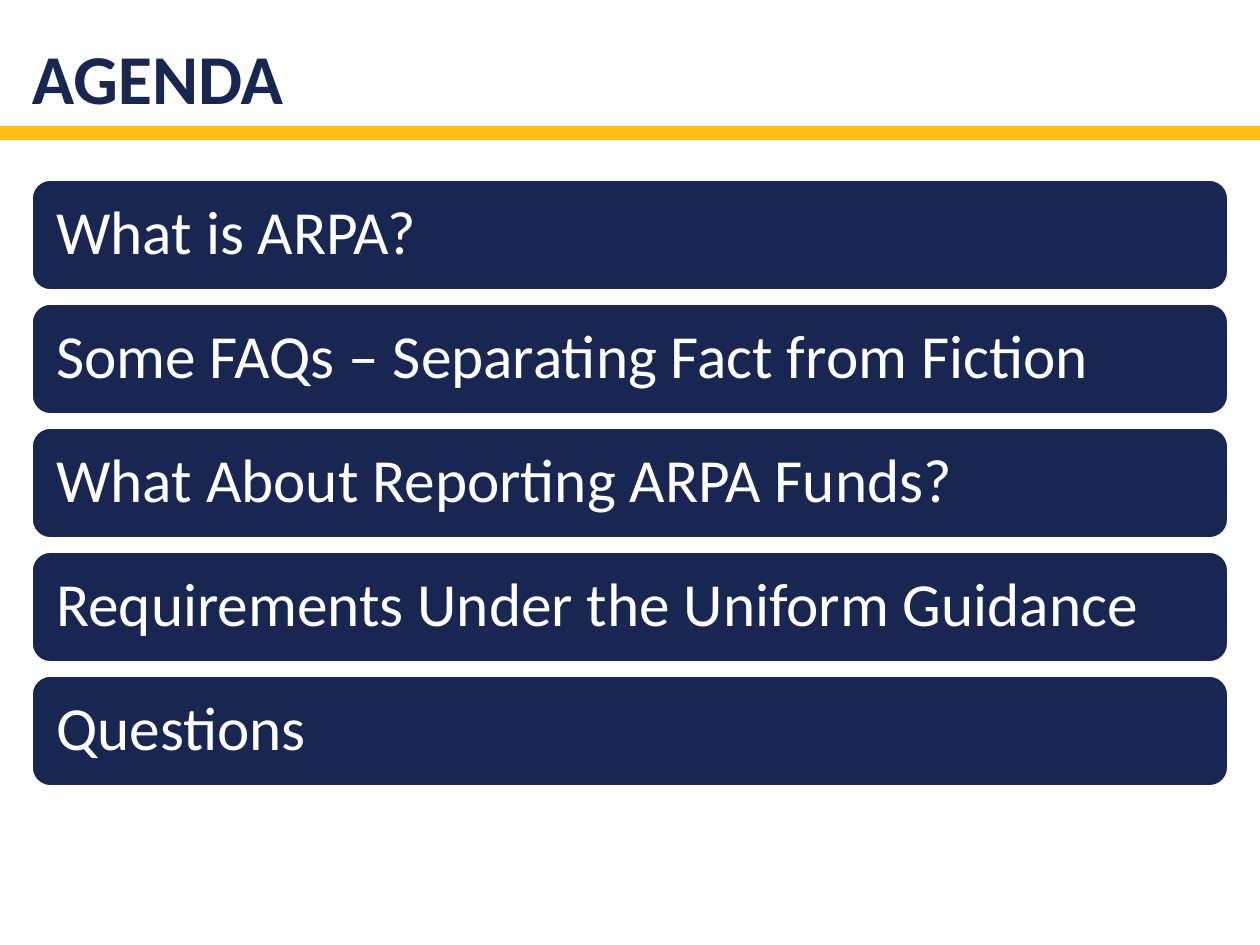
from dataclasses import dataclass

from pptx import Presentation, util as u
from pptx.dml.color import RGBColor
from pptx.enum import shapes, text


@dataclass(frozen=True)
class Theme:
    navy: RGBColor = RGBColor.from_string("182751")
    gold: RGBColor = RGBColor.from_string("FEBD11")
    white: RGBColor = RGBColor.from_string("FFFFFF")
    font: str = "Calibri"
    title_size: int = 40
    item_size: int = 35


THEME = Theme()
SLIDE_W, SLIDE_H = 1260, 945
AGENDA = [
    "What is ARPA?",
    "Some FAQs – Separating Fact from Fiction",
    "What About Reporting ARPA Funds?",
    "Requirements Under the Uniform Guidance",
    "Questions",
]


def px(n):
    return u.Emu(round(n * 914400 / 126))


def add_block(slide, kind, box, fill):
    sp = slide.shapes.add_shape(kind, *map(px, box))
    sp.shadow.inherit = False
    sp.fill.solid()
    sp.fill.fore_color.rgb = fill
    sp.line.fill.background()
    return sp


def write_line(sp, words, size, color, anchor, inset, bold=False):
    """Set one left-aligned line; inset is (side, top and bottom) in px."""
    tf = sp.text_frame
    tf.word_wrap = True
    tf.vertical_anchor = anchor
    tf.margin_left = tf.margin_right = px(inset[0])
    tf.margin_top = tf.margin_bottom = px(inset[1])
    p = tf.paragraphs[0]
    p.alignment = text.PP_ALIGN.LEFT
    p.line_spacing = 0.9
    r = p.add_run()
    r.text = words
    r.font.name = THEME.font
    r.font.size = u.Pt(size)
    r.font.bold = bold
    r.font.color.rgb = color


def add_header(slide, box, title, margin=32, rule_h=14):
    """Place the title in the box and a full-width rule just below it."""
    x, y, w, h = box
    add_block(slide, shapes.MSO_SHAPE.RECTANGLE, (x, y + h, w, rule_h), THEME.gold)
    sp = slide.shapes.add_textbox(*map(px, (x + margin, y, w - 2 * margin, h)))
    write_line(sp, title, THEME.title_size, THEME.navy,
               text.MSO_ANCHOR.BOTTOM, (0, 6), bold=True)


def add_agenda(slide, box, items, gap=14):
    """Stack equal rounded bars that fill the box."""
    x, y, w, h = box
    bar_h = (h - gap * (len(items) - 1)) / len(items)
    for i, item in enumerate(items):
        bar = (x, y + i * (bar_h + gap), w, bar_h)
        sp = add_block(slide, shapes.MSO_SHAPE.ROUNDED_RECTANGLE, bar, THEME.navy)
        sp.line.color.rgb = THEME.white
        sp.line.width = u.Pt(1)
        write_line(sp, item, THEME.item_size, THEME.white,
                   text.MSO_ANCHOR.MIDDLE, (19, 19))


def main():
    prs = Presentation()
    prs.slide_width, prs.slide_height = px(SLIDE_W), px(SLIDE_H)
    slide = prs.slides.add_slide(prs.slide_layouts[6])
    add_header(slide, (0, 0, SLIDE_W, 126), "AGENDA")
    add_agenda(slide, (32, 180, SLIDE_W - 64, 606), AGENDA)
    prs.save("out.pptx")


if __name__ == "__main__":
    main()
